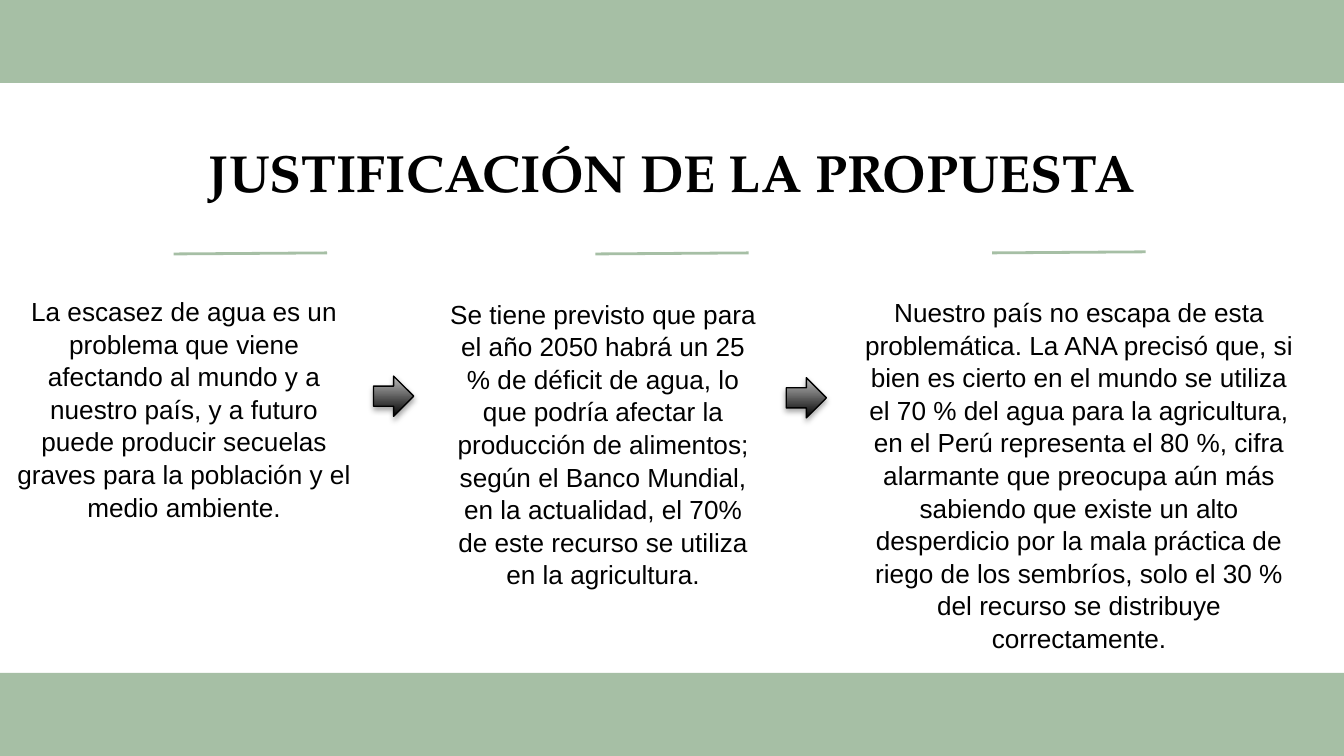
from dataclasses import dataclass

from lxml import etree
from pptx import Presentation
from pptx.dml.color import RGBColor
from pptx.enum import shapes, text
from pptx.oxml import ns
from pptx.util import Cm, Pt


@dataclass(frozen=True)
class Theme:
    green: RGBColor = RGBColor(0xA6, 0xBF, 0xA5)
    black: RGBColor = RGBColor(0, 0, 0)
    grey: RGBColor = RGBColor(0xBD, 0xBD, 0xBD)
    title_font: str = "TeX Gyre Pagella"
    body_font: str = "Arial"
    title_size: Pt = Pt(28)
    body_size: Pt = Pt(14)


THEME = Theme()
WIDTH, HEIGHT, BAND_HEIGHT = 25.4, 14.29, 1.57
ARROW_SIZE, RULE_LENGTH = 0.76, 2.9
TITLE_BOX = (1.98, 2.41, 21.44, 1.52)
COMPARISON_LAYOUT = 4

# Placeholder index, box and wording of each column
COLUMNS = [
    (1, (0, 5.31, 6.96, 5.46),
     "La escasez de agua es un problema que viene afectando al mundo y a "
     "nuestro país, y a futuro puede producir secuelas graves para la "
     "población y el medio ambiente."),
    (2, (8.2, 5.36, 6.4, 6.53),
     "Se tiene previsto que para el año 2050 habrá un 25 % de déficit de "
     "agua, lo que podría afectar la producción de alimentos; según el Banco "
     "Mundial, en la actualidad, el 70% de este recurso se utiliza en la "
     "agricultura."),
    (3, (15.95, 5.33, 8.89, 6.78),
     "Nuestro país no escapa de esta problemática. La ANA precisó que, si "
     "bien es cierto en el mundo se utiliza el 70 % del agua para la "
     "agricultura, en el Perú representa el 80 %, cifra alarmante que "
     "preocupa aún más sabiendo que existe un alto desperdicio por la mala "
     "práctica de riego de los sembríos, solo el 30 % del recurso se "
     "distribuye correctamente."),
]
RULES = [(3.28, 4.8), (11.25, 4.8), (18.75, 4.78)]
ARROWS = [(7.06, 7.11), (14.86, 7.14)]


def set_all(target, values):
    for name, value in values.items():
        setattr(target, name, value)


def add_effects(shape):
    """Give the shape its own, empty effect list."""
    return etree.SubElement(shape._element.spPr, ns.qn("a:effectLst"))


def fill_placeholder(placeholder, box, wording, font, line_spacing=1.0):
    set_all(placeholder, dict(zip(("left", "top", "width", "height"), map(Cm, box))))
    frame = placeholder.text_frame
    frame.text = wording
    margins = dict.fromkeys(
        ("margin_left", "margin_top", "margin_right", "margin_bottom"), Cm(0.25))
    set_all(frame, {**margins, "word_wrap": True,
                    "auto_size": text.MSO_AUTO_SIZE.NONE,
                    "vertical_anchor": text.MSO_ANCHOR.TOP})
    paragraph = frame.paragraphs[0]
    set_all(paragraph, {"alignment": text.PP_ALIGN.CENTER, "space_before": Pt(0),
                        "line_spacing": line_spacing})
    properties = paragraph._p.get_or_add_pPr()
    properties.set("marL", "0")
    properties.set("indent", "0")
    etree.SubElement(properties, ns.qn("a:buNone"))
    run_font = paragraph.runs[0].font
    set_all(run_font, font)
    run_font.color.rgb = THEME.black


def add_band(slide, top):
    band = slide.shapes.add_shape(shapes.MSO_SHAPE.RECTANGLE, 0, Cm(top),
                                  Cm(WIDTH), Cm(BAND_HEIGHT))
    band.shadow.inherit = False
    band.fill.solid()
    band.fill.fore_color.rgb = THEME.green
    band.line.fill.background()


def add_rule(slide, left, top):
    rule = slide.shapes.add_connector(
        shapes.MSO_CONNECTOR.STRAIGHT, Cm(left), Cm(top),
        Cm(left + RULE_LENGTH), Cm(top - 0.02))
    rule.line.color.rgb = THEME.green
    rule.line.width = Pt(1.5)
    add_effects(rule)


def add_arrow(slide, left, top):
    """Add a block arrow, black at the foot and grey above, with a soft shadow."""
    arrow = slide.shapes.add_shape(shapes.MSO_SHAPE.RIGHT_ARROW, Cm(left), Cm(top),
                                   Cm(ARROW_SIZE), Cm(ARROW_SIZE))
    arrow.fill.gradient()
    arrow.fill.gradient_angle = 90
    for stop, color in zip(arrow.fill.gradient_stops, (THEME.black, THEME.grey)):
        stop.color.rgb = color
    arrow.line.color.rgb = THEME.black
    arrow.line.width = Pt(0.75)
    shadow = etree.SubElement(
        add_effects(arrow), ns.qn("a:outerShdw"), blurRad=str(Pt(3.1)),
        dist=str(Pt(1.8)), dir="5400000", rotWithShape="0")
    color = etree.SubElement(shadow, ns.qn("a:srgbClr"), val=str(THEME.black))
    etree.SubElement(color, ns.qn("a:alpha"), val="35000")


def main():
    presentation = Presentation()
    set_all(presentation, {"slide_width": Cm(WIDTH), "slide_height": Cm(HEIGHT)})
    layout = presentation.slide_layouts[COMPARISON_LAYOUT]
    slide = presentation.slides.add_slide(layout)

    for top in (0, HEIGHT - BAND_HEIGHT):
        add_band(slide, top)
    fill_placeholder(slide.shapes.title, TITLE_BOX, "JUSTIFICACIÓN DE LA PROPUESTA",
                     {"name": THEME.title_font, "size": THEME.title_size, "bold": True})
    body_font = {"name": THEME.body_font, "size": THEME.body_size, "bold": False}
    for index, box, wording in COLUMNS:
        fill_placeholder(slide.placeholders[index], box, wording, body_font, 1.04)
    for placeholder in list(slide.placeholders):
        if not placeholder.text_frame.text:
            placeholder._element.getparent().remove(placeholder._element)
    for left, top in RULES:
        add_rule(slide, left, top)
    for left, top in ARROWS:
        add_arrow(slide, left, top)

    presentation.save("out.pptx")


if __name__ == "__main__":
    main()
